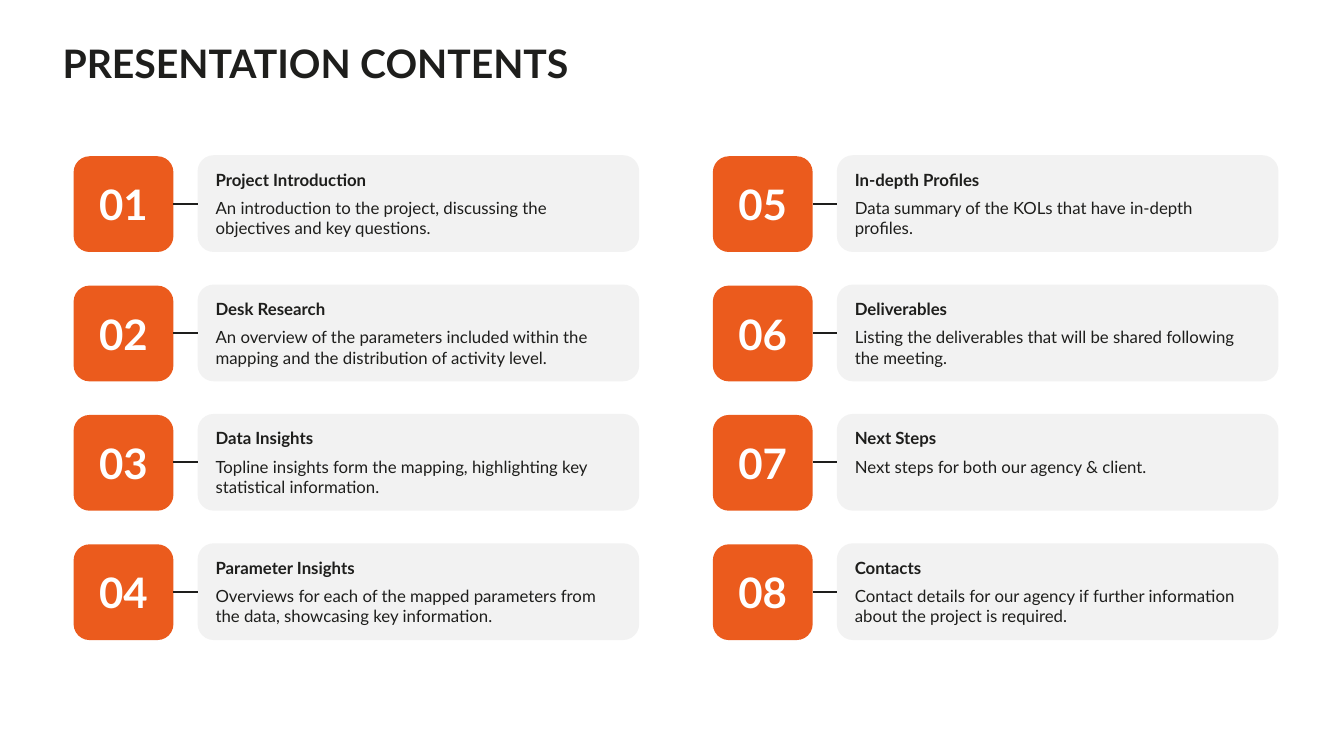
from lxml import etree
from pptx import Presentation
from pptx.dml.color import RGBColor
from pptx.enum import shapes, text
from pptx.oxml import ns
from pptx.util import Inches, Pt

COLORS = {"ink": "1E1E1C", "orange": "EB5B1D", "panel": "F2F2F2", "white": "FFFFFF"}
FONT = "Lato"
ENTRIES = [
    ("Project Introduction",
     "An introduction to the project, discussing the objectives and key questions."),
    ("Desk Research",
     "An overview of the parameters included within the mapping and the distribution of activity level."),
    ("Data Insights",
     "Topline insights form the mapping, highlighting key statistical information."),
    ("Parameter Insights",
     "Overviews for each of the mapped parameters from the data, showcasing key information."),
    ("In-depth Profiles", "Data summary of the KOLs that have in-depth profiles."),
    ("Deliverables", "Listing the deliverables that will be shared following the meeting."),
    ("Next Steps", "Next steps for both our agency & client."),
    ("Contacts",
     "Contact details for our agency if further information about the project is required."),
]
ROWS = 4
FIRST_TOP, LAST_TOP = 1.54, 5.39
ROW_PITCH = (LAST_TOP - FIRST_TOP) / (ROWS - 1)
FIRST_LEFT, COLUMN_PITCH = 0.73, 6.34
BADGE_WIDTH, BADGE_HEIGHT = 0.99, 0.95
PANEL_OFFSET, PANEL_WIDTH, PANEL_HEIGHT = 1.23, 4.38, 0.96


def color(name):
    return RGBColor.from_string(COLORS[name])


def apply(target, values):
    for name, value in values.items():
        setattr(target, name, value)


def write(para, words, size, ink="ink", bold=False, **layout):
    apply(para, layout)
    span = para.add_run()
    span.text = words
    apply(span.font, {"name": FONT, "size": Pt(size), "bold": bold})
    span.font.color.rgb = color(ink)


def add_title(page, words):
    title = page.shapes.title
    apply(title, {"left": Inches(0.52), "top": Inches(0.26),
                  "width": Inches(12.28), "height": Inches(0.79)})
    apply(title.text_frame, {"vertical_anchor": text.MSO_ANCHOR.MIDDLE,
                             "auto_size": text.MSO_AUTO_SIZE.NONE, "word_wrap": True})
    write(title.text_frame.paragraphs[0], words, 28, bold=True,
          alignment=text.PP_ALIGN.LEFT, line_spacing=0.9)


def add_rounded(page, left, top, width, height, fill):
    box = page.shapes.add_shape(shapes.MSO_SHAPE.ROUNDED_RECTANGLE, Inches(left),
                                Inches(top), Inches(width), Inches(height))
    box.shadow.inherit = False
    box.fill.solid()
    box.fill.fore_color.rgb = color(fill)
    box.line.fill.background()
    return box


def add_badge(page, left, top, number):
    badge = add_rounded(page, left, top, BADGE_WIDTH, BADGE_HEIGHT, "orange")
    frame = badge.text_frame
    margins = {f"margin_{side}": Inches(0.1) for side in ("left", "top", "right", "bottom")}
    apply(frame, {"vertical_anchor": text.MSO_ANCHOR.MIDDLE, **margins})
    write(frame.paragraphs[0], f"{number:02d}", 30, "white", True,
          alignment=text.PP_ALIGN.CENTER)


def add_link(page, start, end, height):
    link = page.shapes.add_connector(shapes.MSO_CONNECTOR.STRAIGHT, Inches(start),
                                     Inches(height), Inches(end), Inches(height))
    link.line.color.rgb = color("ink")
    link.line.width = Pt(1.5)
    etree.SubElement(link._element.spPr, ns.qn("a:effectLst"))


def add_description(page, left, top, heading, summary):
    box = page.shapes.add_textbox(Inches(left), Inches(top), Inches(4.13), Inches(0.79))
    frame = box.text_frame
    frame.word_wrap = True
    write(frame.paragraphs[0], heading, 12, bold=True)
    write(frame.add_paragraph(), summary, 12, space_before=Pt(6))


def add_entry(page, index, heading, summary):
    column, row = divmod(index, ROWS)
    left = FIRST_LEFT + column * COLUMN_PITCH
    top = FIRST_TOP + row * ROW_PITCH
    panel_left = left + PANEL_OFFSET
    add_rounded(page, panel_left, top, PANEL_WIDTH, PANEL_HEIGHT, "panel")
    add_badge(page, left, top + 0.01, index + 1)
    add_link(page, panel_left, left + BADGE_WIDTH, top + PANEL_HEIGHT / 2)
    add_description(page, panel_left + 0.08, top + 0.09, heading, summary)


def main():
    """Build the numbered contents slide and save it."""
    deck = Presentation()
    apply(deck, {"slide_width": Inches(13.33), "slide_height": Inches(7.5)})
    page = deck.slides.add_slide(deck.slide_layouts[5])
    add_title(page, "PRESENTATION CONTENTS")
    for index, (heading, summary) in enumerate(ENTRIES):
        add_entry(page, index, heading, summary)
    deck.save("out.pptx")


if __name__ == "__main__":
    main()
